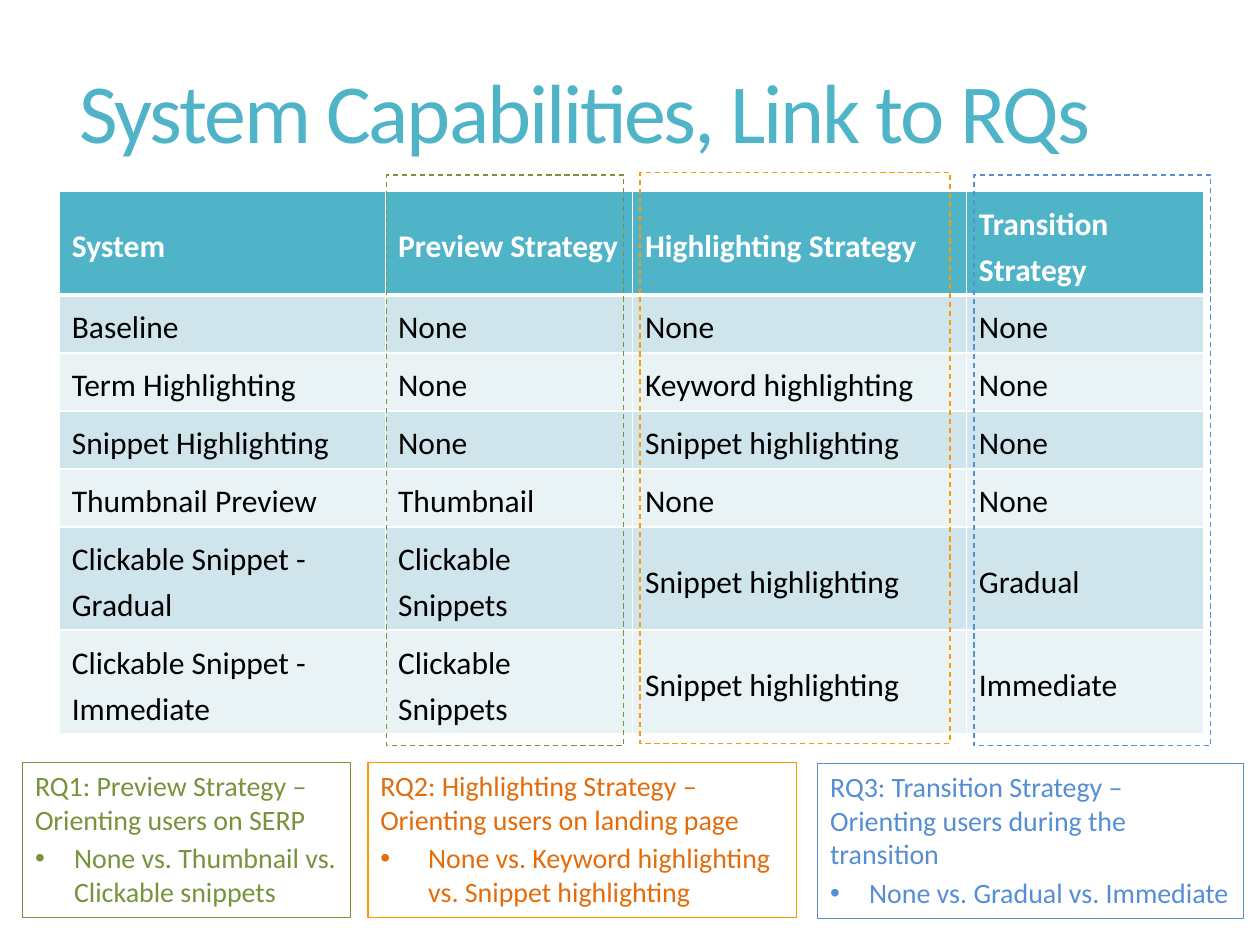
from lxml import etree
from pptx import Presentation
from pptx.dml.color import RGBColor
from pptx.enum.dml import MSO_LINE
from pptx.enum.shapes import MSO_SHAPE
from pptx.enum.text import MSO_ANCHOR, MSO_AUTO_SIZE
from pptx.oxml.ns import qn
from pptx.util import Inches, Pt

RECTANGLE = MSO_SHAPE.RECTANGLE
DASH = MSO_LINE.DASH
MIDDLE = MSO_ANCHOR.MIDDLE
GROW = MSO_AUTO_SIZE.SHAPE_TO_FIT_TEXT

TEAL = RGBColor(0x50, 0xB4, 0xC8)
BAND_DARK = RGBColor(0xD0, 0xE5, 0xEB)
BAND_LIGHT = RGBColor(0xE9, 0xF2, 0xF5)
WHITE = RGBColor(0xFF, 0xFF, 0xFF)
BLACK = RGBColor(0x00, 0x00, 0x00)
GREEN = RGBColor(0x77, 0x93, 0x3C)
AMBER = RGBColor(0xFF, 0x99, 0x00)
ORANGE = RGBColor(0xE4, 0x6C, 0x0A)
BLUE = RGBColor(0x55, 0x8E, 0xD5)

FONT = "Calibri"
GRID_COLUMNS, GRID_ROWS = 100, 75
UNIT = Inches(0.1)

TITLE_BOX = (5.3, 4, 88.4, 10.4)
TABLE_BOX = (4.7, 15.2, 90.9, 43)
COLUMN_WIDTHS = (25.9, 19.6, 26.5, 18.8)
ROW_HEIGHT = 4.1

SYSTEMS = (
    ("System", "Preview Strategy", "Highlighting Strategy", "Transition Strategy"),
    ("Baseline", "None", "None", "None"),
    ("Term Highlighting", "None", "Keyword highlighting", "None"),
    ("Snippet Highlighting", "None", "Snippet highlighting", "None"),
    ("Thumbnail Preview", "Thumbnail", "None", "None"),
    ("Clickable Snippet - Gradual", "Clickable Snippets", "Snippet highlighting", "Gradual"),
    ("Clickable Snippet - Immediate", "Clickable Snippets", "Snippet highlighting", "Immediate"),
)

QUESTIONS = (
    ((1.8, 60.5, 26, 12.3), GREEN, GREEN, 3.1,
     "RQ1: Preview Strategy – Orienting users on SERP",
     "None vs. Thumbnail vs. Clickable snippets"),
    ((29.2, 60.5, 34, 12.3), AMBER, ORANGE, 3.8,
     "RQ2: Highlighting Strategy – Orienting users on landing page",
     "None vs. Keyword highlighting vs. Snippet highlighting"),
    ((64.9, 60.6, 33.8, 12.3), BLUE, BLUE, 3.1,
     "RQ3: Transition Strategy – Orienting users during the transition",
     "None vs. Gradual vs. Immediate"),
)

COLUMN_FRAMES = (
    ((30.7, 13.9, 18.8, 45.3), GREEN),
    ((50.8, 13.7, 24.6, 45.3), AMBER),
    ((77.3, 13.9, 18.8, 45.3), BLUE),
)


def units(count):
    """Turn a count of grid units into a length."""
    return int(count * UNIT)


def place(box):
    """Turn a grid box into left, top, width and height."""
    return [units(count) for count in box]


def style_text(paragraph, size, color, bold=False):
    """Format every run of a paragraph."""
    for run in paragraph.runs:
        run.font.name = FONT
        run.font.size = Pt(size)
        run.font.bold = bold
        run.font.color.rgb = color


def add_title(slide, box, wording):
    """Place the slide title, tightly tracked."""
    frame = slide.shapes.add_textbox(*place(box)).text_frame
    frame.word_wrap = True
    frame.vertical_anchor = MIDDLE
    frame.text = wording
    heading = frame.paragraphs[0]
    heading.line_spacing = 0.9
    style_text(heading, 48, TEAL)
    heading.runs[0].font._element.set("spc", "-120")


def add_border(cell, side, width):
    """Draw one white cell edge."""
    properties = cell._tc.get_or_add_tcPr()
    edge = etree.SubElement(properties, qn(f"a:ln{side}"), w=str(Pt(width)))
    fill = etree.SubElement(edge, qn("a:solidFill"))
    etree.SubElement(fill, qn("a:srgbClr"), val=str(WHITE))


def style_cell(cell, row):
    """Give a cell its borders, band colour and text format."""
    edges = {"L": 1, "R": 1, "T": 3 if row == 1 else 1, "B": 3 if row == 0 else 1}
    for side, width in edges.items():
        add_border(cell, side, width)
    band = BAND_DARK if row % 2 else BAND_LIGHT
    cell.fill.solid()
    cell.fill.fore_color.rgb = TEAL if row == 0 else band
    cell.vertical_anchor = MIDDLE
    paragraph = cell.text_frame.paragraphs[0]
    paragraph.line_spacing = 1.2
    style_text(paragraph, 18, WHITE if row == 0 else BLACK, bold=row == 0)


def add_systems_table(slide, box):
    """Place the table of systems and their strategies."""
    holder = slide.shapes.add_table(len(SYSTEMS), len(COLUMN_WIDTHS), *place(box))
    table = holder.table
    for column, width in zip(table.columns, COLUMN_WIDTHS):
        column.width = units(width)
    for row, system in enumerate(SYSTEMS):
        table.rows[row].height = units(ROW_HEIGHT)
        for column, wording in enumerate(system):
            cell = table.cell(row, column)
            cell.text = wording
            style_cell(cell, row)
    holder.height = units(box[3])


def add_question(slide, box, edge_color, text_color, indent, question, comparison):
    """Place a research question with its bulleted comparison."""
    panel = slide.shapes.add_textbox(*place(box))
    panel.line.color.rgb = edge_color
    panel.line.width = Pt(0.75)
    frame = panel.text_frame
    frame.word_wrap = True
    frame.auto_size = GROW
    frame.text = question
    bullet = frame.add_paragraph()
    bullet.text = comparison
    bullet.space_before = Pt(3)
    properties = bullet._p.get_or_add_pPr()
    properties.set("marL", str(units(indent)))
    properties.set("indent", str(-units(indent)))
    etree.SubElement(properties, qn("a:buFont"), typeface="Arial")
    etree.SubElement(properties, qn("a:buChar"), char="•")
    for paragraph in frame.paragraphs:
        style_text(paragraph, 16, text_color)


def add_column_frame(slide, box, color):
    """Outline a table column with a dashed frame."""
    outline = slide.shapes.add_shape(RECTANGLE, *place(box))
    outline.shadow.inherit = False
    outline.fill.background()
    outline.line.color.rgb = color
    outline.line.width = Pt(0.75)
    outline.line.dash_style = DASH


def main():
    """Build and save the slide."""
    deck = Presentation()
    deck.slide_width = units(GRID_COLUMNS)
    deck.slide_height = units(GRID_ROWS)
    slide = deck.slides.add_slide(deck.slide_layouts[6])
    add_title(slide, TITLE_BOX, "System Capabilities, Link to RQs")
    add_systems_table(slide, TABLE_BOX)
    for question in QUESTIONS:
        add_question(slide, *question)
    for column_frame in COLUMN_FRAMES:
        add_column_frame(slide, *column_frame)
    deck.save("out.pptx")


if __name__ == "__main__":
    main()
